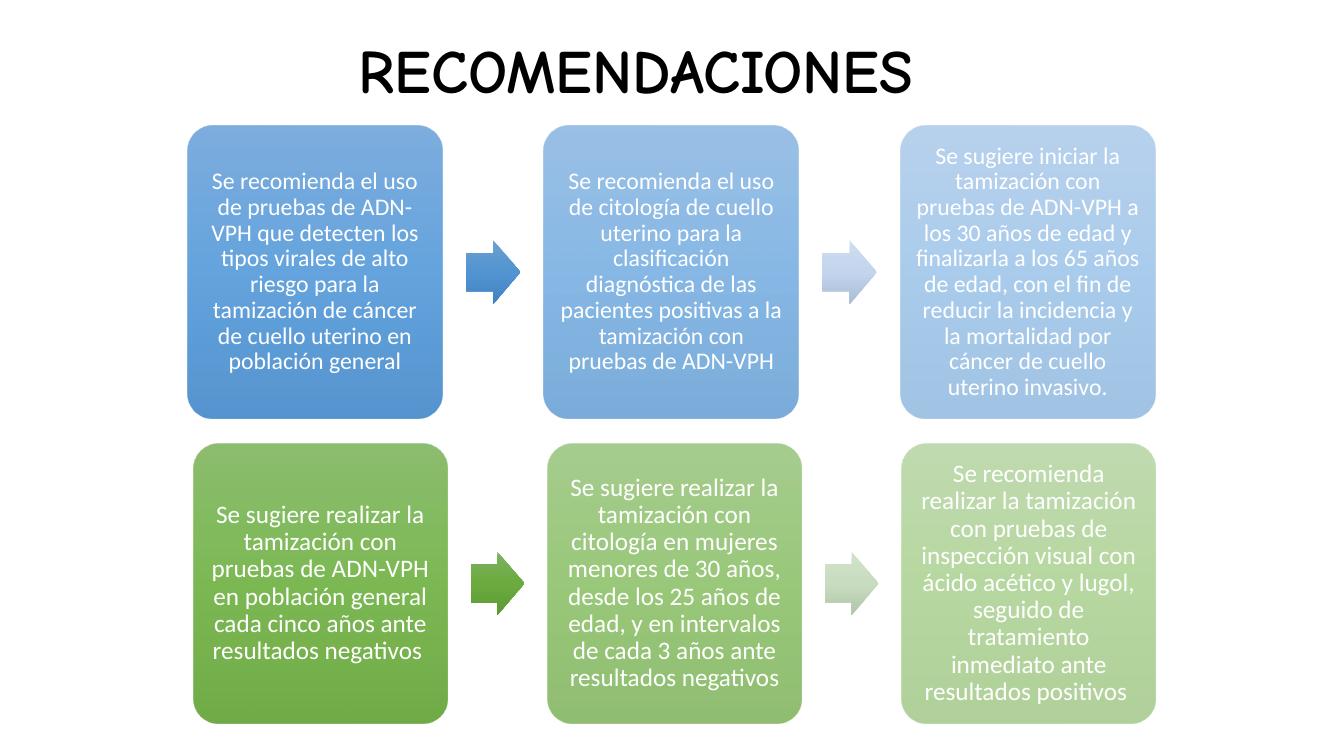
from collections import namedtuple
from pptx import Presentation
from pptx.dml.color import RGBColor
from pptx.enum.shapes import MSO_SHAPE
from pptx.enum.text import MSO_ANCHOR, PP_ALIGN
from pptx.oxml import parse_xml
from pptx.oxml.ns import nsdecls
from pptx.util import Pt

Theme = namedtuple("Theme", "title_font body_font title_size ink white")
Row = namedtuple("Row", "left top width height pitch size arrow card heads notes")

THEME = Theme("Comic Neue", "Calibri", 44, "000000", "FFFFFF")
FADES = (90, 70, 50)

BLUE = Row(
    133.9, 90, 182.2, 208.8, 254.6, 17, (38.9, 45.4),
    ("71A6DB", "559BDB", "448ACA"),
    (("6EA0D2", "5194D1", "4184C1"), ("CEDCEF", "C3D5ED", "AABDD6")),
    (
        "Se recomienda el uso de pruebas de ADN-VPH que detecten los tipos virales "
        "de alto riesgo para la tamización de cáncer de cuello uterino en población general",
        "Se recomienda el uso de citología de cuello uterino para la clasificación "
        "diagnóstica de las pacientes positivas a la tamización con pruebas de ADN-VPH",
        "Se sugiere iniciar la tamización con pruebas de ADN-VPH a los 30 años de edad "
        "y finalizarla a los 65 años de edad, con el fin de reducir la incidencia y la "
        "mortalidad por cáncer de cuello uterino invasivo.",
    ),
)
GREEN = Row(
    138.4, 316.6, 180.9, 200.2, 253, 18, (38.5, 45),
    ("81B861", "6FB242", "62A336"),
    (("7DB160", "6AAA3F", "5D9C34"), ("D1E1CA", "C8DDC0", "B1C6A9")),
    (
        "Se sugiere realizar la tamización con pruebas de ADN-VPH en población general "
        "cada cinco años ante resultados negativos ",
        "Se sugiere realizar la tamización con citología en mujeres menores de 30 años, "
        "desde los 25 años de edad, y en intervalos de cada 3 años ante resultados negativos",
        "Se recomienda realizar la tamización con pruebas de inspección visual con ácido "
        "acético y lugol, seguido de tratamiento inmediato ante resultados positivos ",
    ),
)


def write(shape, text, font, size, color, bold=False):
    frame = shape.text_frame
    frame.word_wrap = True
    frame.vertical_anchor = MSO_ANCHOR.MIDDLE
    frame.text = text
    line = frame.paragraphs[0]
    line.alignment = PP_ALIGN.CENTER
    line.line_spacing = 0.9
    style = line.runs[0].font
    style.name, style.size, style.bold = font, Pt(size), bold
    style.color.rgb = RGBColor.from_string(color)


def shade(shape, colors, alpha):
    stops = "".join(
        f'<a:gs pos="{pos}"><a:srgbClr val="{color}">'
        f'<a:alpha val="{alpha * 1000}"/></a:srgbClr></a:gs>'
        for pos, color in zip((0, 50000, 100000), colors)
    )
    fill = parse_xml(
        f'<a:gradFill {nsdecls("a")} rotWithShape="1"><a:gsLst>{stops}</a:gsLst>'
        '<a:lin ang="5400000" scaled="0"/></a:gradFill>'
    )
    shape.fill.background()
    old = shape.element.spPr.find(fill.tag.replace("gradFill", "noFill"))
    shape.element.spPr.replace(old, fill)


def add_block(slide, kind, box, colors, alpha=100):
    shape = slide.shapes.add_shape(kind, *map(Pt, box))
    shape.shadow.inherit = False
    shade(shape, colors, alpha)
    shape.line.fill.background()
    return shape


def add_card(slide, row, left, text, fade):
    box = (left, row.top, row.width, row.height)
    card = add_block(slide, MSO_SHAPE.ROUNDED_RECTANGLE, box, row.card, fade)
    card.adjustments[0] = 0.1
    frame = card.text_frame
    frame.margin_left = frame.margin_right = Pt(5.2)
    frame.margin_top = frame.margin_bottom = Pt(5.2)
    write(card, text, THEME.body_font, row.size, THEME.white)


def add_arrow(slide, row, left, colors):
    width, height = row.arrow
    top = row.top + (row.height - height) / 2
    start = left + (row.pitch + row.width - width) / 2
    arrow = add_block(slide, MSO_SHAPE.RIGHT_ARROW, (start, top, width, height), colors)
    arrow.adjustments[0] = 0.6
    arrow.adjustments[1] = 0.5


def add_row(slide, row):
    for step, (text, fade) in enumerate(zip(row.notes, FADES)):
        left = row.left + step * row.pitch
        add_card(slide, row, left, text, fade)
        if step < len(row.heads):
            add_arrow(slide, row, left, row.heads[step])


def add_title(slide, text):
    box = slide.shapes.add_textbox(Pt(152), Pt(0), Pt(620.6), Pt(104.4))
    write(box, text, THEME.title_font, THEME.title_size, THEME.ink, True)


def main():
    deck = Presentation()
    deck.slide_width, deck.slide_height = Pt(960), Pt(540)
    slide = deck.slides.add_slide(deck.slide_layouts[6])
    add_title(slide, "RECOMENDACIONES ")
    for row in (BLUE, GREEN):
        add_row(slide, row)
    deck.save("out.pptx")


if __name__ == "__main__":
    main()
